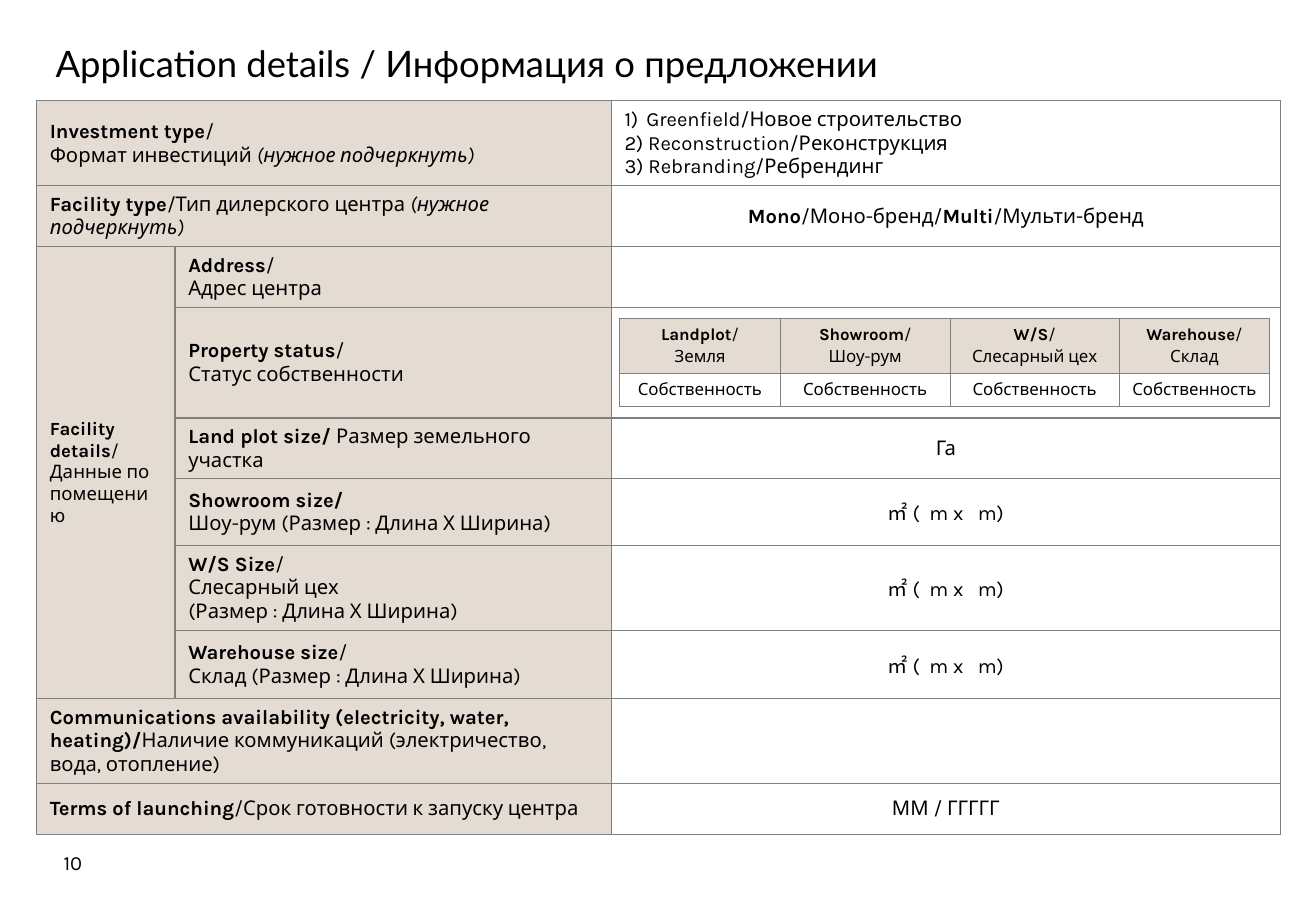
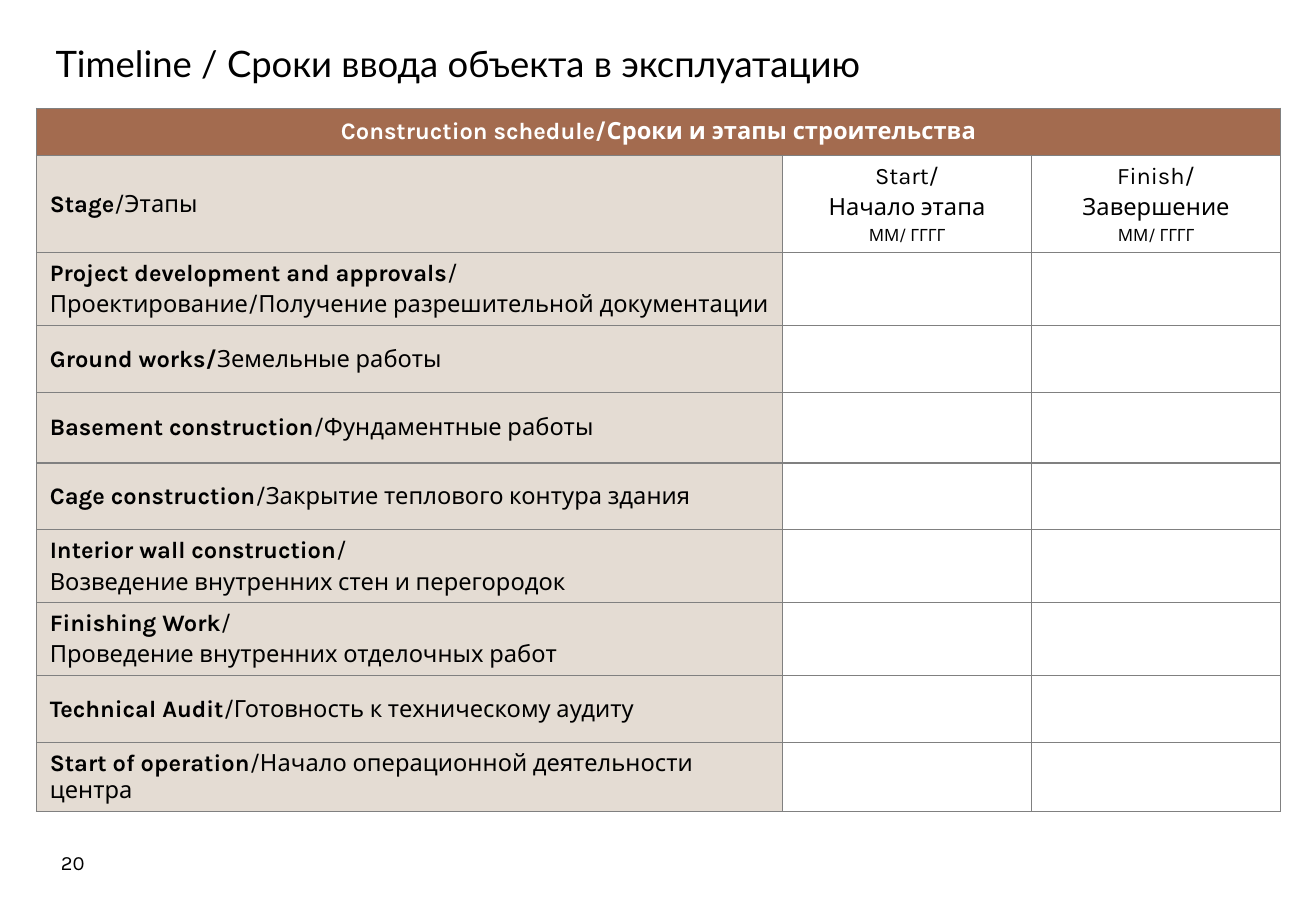
from lxml.etree import SubElement
from pptx import Presentation
from pptx.dml.color import RGBColor
from pptx.enum.text import MSO_ANCHOR, PP_ALIGN
from pptx.oxml import parse_xml
from pptx.oxml.ns import nsdecls, qn
from pptx.util import Inches, Pt

WIDE, HIGH = Inches(10.83), Inches(7.5)
BLACK = RGBColor(0, 0, 0)
WHITE = RGBColor(255, 255, 255)
SAND = RGBColor(0xE4, 0xDC, 0xD3)
RUST = RGBColor(0xA3, 0x6B, 0x4F)
GREY = RGBColor(0x80, 0x80, 0x80)
BODY, HEAD = "Karla", "Lato"
LEFT, SPAN = 2.77, 94.55
AREA = "㎡ (  m x   m)"

DETAILS = [
    ["*Investment type*/\nФормат инвестиций _(нужное подчеркнуть)_", "",
     "Greenfield/Новое строительство\n2) Reconstruction/Реконструкция\n3) Rebranding/Ребрендинг"],
    ["*Facility type*/Тип дилерского центра _(нужное подчеркнуть)_", "",
     "*Mono*/Моно-бренд/*Multi*/Мульти-бренд"],
    ["*Facility details*/\nДанные по помещению", "*Address*/\nАдрес центра", ""],
    ["", "*Property status*/\nСтатус собственности", ""],
    ["", "*Land plot size/ *Размер земельного участка", "Га"],
    ["", "*Showroom size/*\nШоу-рум (Размер : Длина Х Ширина)", AREA],
    ["", "*W/S Size*/\nСлесарный цех\n(Размер : Длина Х Ширина)", AREA],
    ["", "*Warehouse size*/\nСклад (Размер : Длина Х Ширина)", AREA],
    ["*Communications availability (electricity, water, heating)/*"
     "Наличие коммуникаций (электричество, вода, отопление)", "", ""],
    ["*Terms of launching*/Срок готовности к запуску центра", "", "ММ / ГГГГГ"],
]
STATUS = [
    ["*Landplot*/\nЗемля", "*Showroom*/\nШоу-рум", "*W/S*/\nСлесарный цех", "*Warehouse*/\nСклад"],
    ["Собственность"] * 4,
]
STAGES = [
    "*Project development and approvals*/\nПроектирование/Получение разрешительной документации",
    "*Ground works/*Земельные работы",
    "*Basement construction*/Фундаментные работы",
    "*Cage construction*/Закрытие теплового контура здания",
    "*Interior wall construction*/\nВозведение внутренних стен и перегородок",
    "*Finishing Work*/\nПроведение внутренних отделочных работ",
    "*Technical Audit*/Готовность к техническому аудиту",
    "*Start of operation*/Начало операционной деятельности центра",
]
SCHEDULE = [
    ["*Construction schedule/Сроки и этапы строительства*", "", ""],
    ["*Stage*/Этапы", "Start/\nНачало этапа\nММ/ ГГГГ", "Finish/\nЗавершение\nММ/ ГГГГ"],
] + [[stage, "", ""] for stage in STAGES]


def place(left, top, width, height):
    return [round(size * share / 100)
            for size, share in zip((WIDE, HIGH, WIDE, HIGH), (left, top, width, height))]


def write(frame, text, size, align=PP_ALIGN.LEFT, ink=BLACK, face=BODY, gap=0):
    for row, line in enumerate(text.split("\n")):
        para = frame.paragraphs[0] if row == 0 else frame.add_paragraph()
        para.alignment = align
        if row and gap:
            para.space_before = Pt(gap)
        font = para.font
        font.size, font.name = Pt(size), face
        font.color.rgb = ink
        for bold, part in enumerate(line.split("*")):
            for slant, piece in enumerate(part.split("_")):
                if piece:
                    run = para.add_run()
                    run.text = piece
                    if bold % 2:
                        run.font.bold = True
                    if slant % 2:
                        run.font.italic = True


def label(slide, box, text, size, **style):
    frame = slide.shapes.add_textbox(*place(*box)).text_frame
    frame.word_wrap = True
    frame.vertical_anchor = MSO_ANCHOR.MIDDLE
    write(frame, text, size, **style)


def page(deck, title, number):
    slide = deck.slides.add_slide(deck.slide_layouts[6])
    label(slide, (3.32, 3.87, 92.43, 6.13), title, 21.6, face=HEAD)
    label(slide, (LEFT, 92, 5.54, 5.33), number, 12, align=PP_ALIGN.CENTER)
    return slide


def border(cell):
    props = cell._tc.get_or_add_tcPr()
    for side in "LRTB":
        props.append(parse_xml(
            f'<a:ln{side} {nsdecls("a")} w="{Pt(0.75)}"><a:solidFill>'
            f'<a:srgbClr val="{GREY}"/></a:solidFill></a:ln{side}>'))


def share(lines, total, name, parts):
    for line, part in zip(lines, parts):
        setattr(line, name, round(total * part / sum(parts)))


def grid(slide, box, cols, rows, data, tint):
    box = place(*box)
    table = slide.shapes.add_table(len(rows), len(cols), *box).table
    table.first_row = table.horz_banding = False
    share(table.columns, box[2], "width", cols)
    share(table.rows, box[3], "height", rows)
    for row, texts in enumerate(data):
        for col, text in enumerate(texts):
            cell = table.cell(row, col)
            border(cell)
            fill = tint(row, col)
            if fill:
                cell.fill.solid()
                cell.fill.fore_color.rgb = fill
            else:
                cell.fill.background()
            cell.vertical_anchor = MSO_ANCHOR.MIDDLE
            cell.margin_left = cell.margin_right = Inches(0.11)
    return table


def fill(table, data, size, align, gap=0):
    for row, texts in enumerate(data):
        for col, text in enumerate(texts):
            if text:
                write(table.cell(row, col).text_frame, text, size, align(row, col), gap=gap)


def join(table, first, last):
    table.cell(*first).merge(table.cell(*last))


def number(paras):
    for para in paras:
        props = para._p.get_or_add_pPr()
        props.set("marL", str(Inches(0.18)))
        props.set("indent", str(-Inches(0.18)))
    props = paras[0]._p.get_or_add_pPr()
    mark = SubElement(props, qn("a:buAutoNum"))
    mark.set("type", "arabicParenR")
    props.insert(0, mark)


def details(deck):
    slide = page(deck, "Application details / Информация о предложении", "10")
    table = grid(slide, (LEFT, 11.07, SPAN, 79.73), (114, 359, 551),
                 (69, 49, 49, 91, 49, 55, 69, 56, 69, 42), DETAILS,
                 lambda row, col: SAND if col < 2 else None)
    for row in (0, 1, 8, 9):
        join(table, (row, 0), (row, 1))
    join(table, (2, 0), (7, 0))
    fill(table, DETAILS, 12,
         lambda row, col: PP_ALIGN.CENTER if row and col == 2 else PP_ALIGN.LEFT)
    number(table.cell(0, 2).text_frame.paragraphs)
    for para in table.cell(2, 0).text_frame.paragraphs:
        para.font.size = Pt(11)

    inner = grid(slide, (47.09, 34.93, 49.4, 9.47), (132, 140, 139, 124), (45, 26), STATUS,
                 lambda row, col: None if row else SAND)
    for col in range(4):
        cell = inner.cell(0, col)
        cell.margin_left = cell.margin_right = Inches(0.04)
    fill(inner, STATUS, 10, lambda row, col: PP_ALIGN.CENTER, gap=1.7)


def timeline(deck):
    slide = page(deck, "Timeline / Сроки ввода объекта в эксплуатацию", "20")
    table = grid(slide, (LEFT, 11.87, SPAN, 76.27), (614, 205, 205),
                 (39, 78, 59, 55, 58, 55, 59, 59, 55, 55), SCHEDULE,
                 lambda row, col: RUST if row == 0 else None if col else SAND)
    join(table, (0, 0), (0, 2))
    fill(table, SCHEDULE, 14,
         lambda row, col: PP_ALIGN.LEFT if row and not col else PP_ALIGN.CENTER, gap=2.4)
    table.cell(0, 0).text_frame.paragraphs[0].font.color.rgb = WHITE
    for col in (1, 2):
        table.cell(1, col).text_frame.paragraphs[2].font.size = Pt(10)


def main():
    deck = Presentation()
    deck.slide_width, deck.slide_height = WIDE, HIGH
    details(deck)
    timeline(deck)
    deck.save("out.pptx")


if __name__ == "__main__":
    main()
